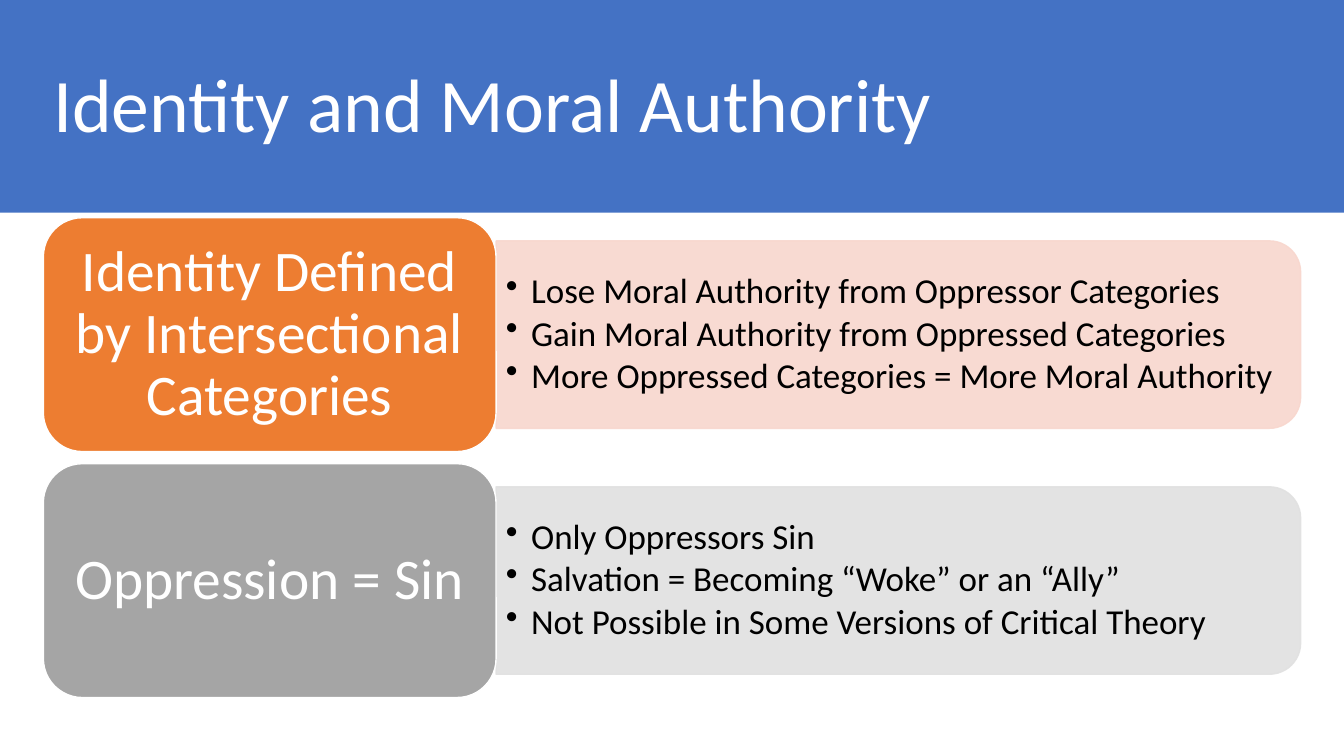
import pptx
import pptx.dml.color
import pptx.enum.shapes
import pptx.enum.text
import pptx.oxml.ns
import pptx.util
from lxml import etree

Inches = pptx.util.Inches
Pt = pptx.util.Pt
SHAPES = pptx.enum.shapes.MSO_SHAPE
ALIGN = pptx.enum.text.PP_ALIGN

FONT = "Calibri"
WHITE = "FFFFFF"
LEFT = 0.43
LABEL_WIDTH, LABEL_HEIGHT = 4.49, 2.32
PANEL_WIDTH, PANEL_HEIGHT = 7.98, 1.86
FIRST_ROW_TOP, ROW_PITCH = 2.16, 2.44

# Label, label colour, panel colour, points
ROWS = [
    ("Identity Defined by Intersectional Categories", "ED7D31", "F8D7CE", [
        "Lose Moral Authority from Oppressor Categories",
        "Gain Moral Authority from Oppressed Categories",
        "More Oppressed Categories = More Moral Authority",
    ]),
    ("Oppression = Sin", "A5A5A5", "E1E1E1", [
        "Only Oppressors Sin",
        "Salvation = Becoming “Woke” or an “Ally”",
        "Not Possible in Some Versions of Critical Theory",
    ]),
]


def rgb(color):
    return pptx.dml.color.RGBColor.from_string(color)


def set_opacity(fill_owner, percent):
    for color in fill_owner.iter(pptx.oxml.ns.qn("a:srgbClr")):
        alpha = etree.SubElement(color, pptx.oxml.ns.qn("a:alpha"))
        alpha.set("val", str(percent * 1000))


def add_block(slide, kind, left, top, width, height, fill, line=None):
    block = slide.shapes.add_shape(
        kind, Inches(left), Inches(top), Inches(width), Inches(height))
    block.shadow.inherit = False
    block.fill.solid()
    block.fill.fore_color.rgb = rgb(fill)
    if line:
        block.line.color.rgb = rgb(line)
        block.line.width = Pt(1)
    else:
        block.line.fill.background()
    return block


def write(holder, lines, size, color, align=ALIGN.LEFT, after=0, inset=(0.1, 0.05)):
    frame = holder.text_frame
    frame.word_wrap = True
    frame.vertical_anchor = pptx.enum.text.MSO_ANCHOR.MIDDLE
    frame.margin_left = frame.margin_right = Inches(inset[0])
    frame.margin_top = frame.margin_bottom = Inches(inset[1])
    frame.text = "\n".join(lines)
    for paragraph in frame.paragraphs:
        paragraph.alignment = align
        paragraph.line_spacing = 0.9
        paragraph.space_after = Pt(after)
        font = paragraph.runs[0].font
        font.name, font.size = FONT, Pt(size)
        font.color.rgb = rgb(color)


def add_text(slide, left, top, width, height, lines, size, color, after=0):
    box = slide.shapes.add_textbox(
        Inches(left), Inches(top), Inches(width), Inches(height))
    write(box, lines, size, color, after=after)
    return box


def add_bullets(box):
    for paragraph in box.text_frame.paragraphs:
        properties = paragraph._p.get_or_add_pPr()
        properties.set("marL", str(Inches(0.25)))
        properties.set("indent", str(-Inches(0.25)))
        bullet = etree.SubElement(properties, pptx.oxml.ns.qn("a:buChar"))
        bullet.set("char", "•")


def add_row(slide, top, label, label_color, panel_color, points):
    middle = top + LABEL_HEIGHT / 2
    panel_left = LEFT + LABEL_WIDTH

    # Panel, a tall shape turned so that its rounded corners face right
    panel = add_block(
        slide, SHAPES.ROUND_2_SAME_RECTANGLE,
        panel_left + (PANEL_WIDTH - PANEL_HEIGHT) / 2, middle - PANEL_WIDTH / 2,
        PANEL_HEIGHT, PANEL_WIDTH, panel_color, panel_color)
    panel.rotation = 90
    set_opacity(panel._element.spPr, 90)

    # Points, kept upright over the panel
    add_bullets(add_text(slide, panel_left, middle - 0.84, 7.89, 1.68,
                         points, 25, "000000", after=3.5))

    # Label; the rounded corners already keep the text off the edge
    label_block = add_block(slide, SHAPES.ROUNDED_RECTANGLE, LEFT, top,
                            LABEL_WIDTH, LABEL_HEIGHT, label_color, WHITE)
    write(label_block, [label], 41, WHITE, ALIGN.CENTER, inset=(0.16, 0.09))


def main():
    presentation = pptx.Presentation()
    presentation.slide_width = Inches(13.33)
    presentation.slide_height = Inches(7.5)
    slide = presentation.slides.add_slide(presentation.slide_layouts[6])

    # Title band
    add_block(slide, SHAPES.RECTANGLE, 0, 0, 13.33, 2.11, "4472C4")
    add_text(slide, LEFT, 0.35, 12.48, 1.45,
             ["Identity and Moral Authority"], 54, WHITE)

    # Rows
    for index, row in enumerate(ROWS):
        add_row(slide, FIRST_ROW_TOP + index * ROW_PITCH, *row)

    presentation.save("out.pptx")


if __name__ == "__main__":
    main()
